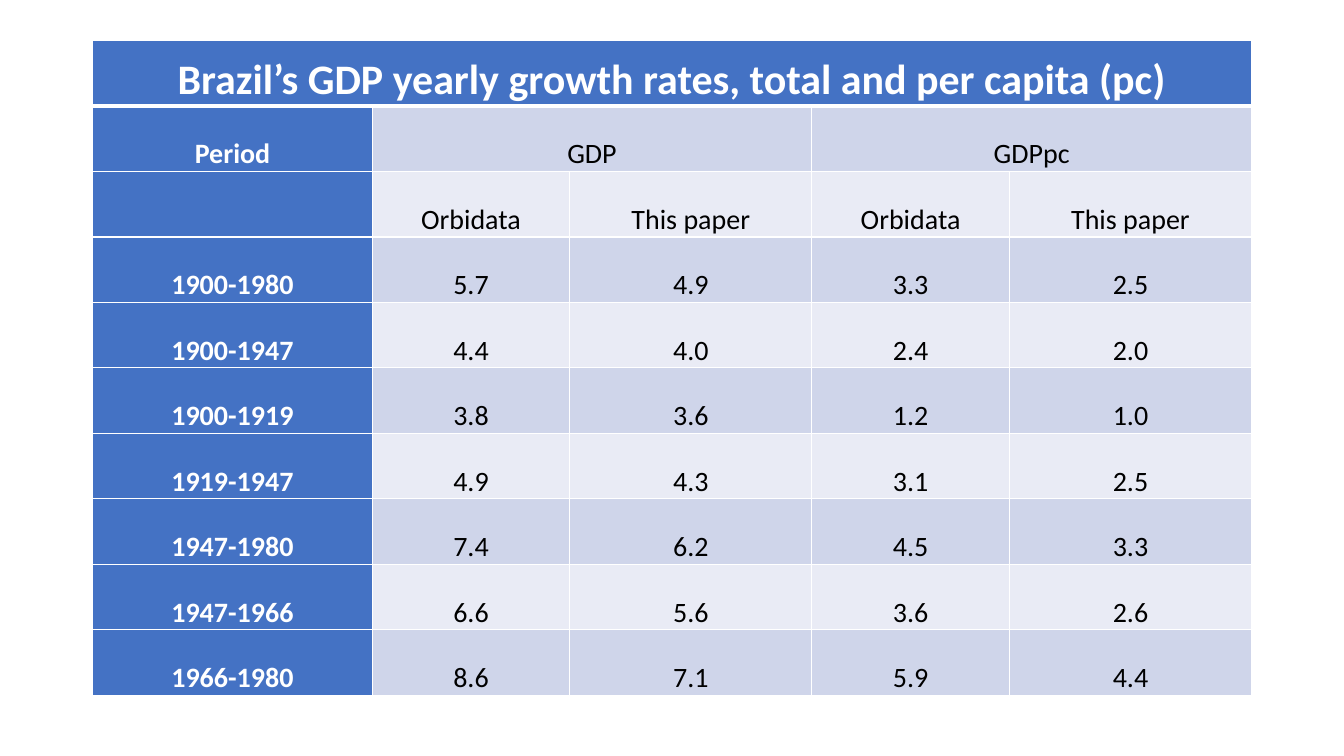
from lxml import etree
from pptx import Presentation
from pptx.dml.color import RGBColor
from pptx.enum.text import MSO_ANCHOR, PP_ALIGN
from pptx.oxml.ns import qn
from pptx.util import Cm, Pt

CENTER = PP_ALIGN.CENTER
BOTTOM = MSO_ANCHOR.BOTTOM

BLUE = RGBColor(0x44, 0x72, 0xC4)
DARK_BAND = RGBColor(0xCF, 0xD5, 0xEA)
LIGHT_BAND = RGBColor(0xE9, 0xEB, 0xF5)
WHITE = RGBColor(0xFF, 0xFF, 0xFF)
BLACK = RGBColor(0x00, 0x00, 0x00)

BLANK_LAYOUT = 6
COLUMN_WIDTHS = [7.04, 4.98, 6.1, 4.98, 6.1]
ROW_HEIGHT = 1.65

GROWTH_RATES = [
    ["Brazil’s GDP yearly growth rates, total and per capita (pc)", "", "", "", ""],
    ["Period", "GDP", "", "GDPpc", ""],
    ["", "Orbidata", "This paper", "Orbidata", "This paper"],
    ["1900-1980", "5.7", "4.9", "3.3", "2.5"],
    ["1900-1947", "4.4", "4.0", "2.4", "2.0"],
    ["1900-1919", "3.8", "3.6", "1.2", "1.0"],
    ["1919-1947", "4.9", "4.3", "3.1", "2.5"],
    ["1947-1980", "7.4", "6.2", "4.5", "3.3"],
    ["1947-1966", "6.6", "5.6", "3.6", "2.6"],
    ["1966-1980", "8.6", "7.1", "5.9", "4.4"],
]
# Merged headings: row, first column, last column
HEADING_SPANS = [(0, 0, 4), (1, 1, 2), (1, 3, 4)]


class GrowthPage:
    """Holds the table style and the current slide."""

    font_name = "Calibri"
    title_size = Pt(30)
    body_size = Pt(20)

    def __init__(self, deck):
        self.page = deck.slides.add_slide(deck.slide_layouts[BLANK_LAYOUT])

    def add_table(self, left, top, rows, widths, row_height, spans):
        frame = self.page.shapes.add_table(
            len(rows), len(widths), Cm(left), Cm(top),
            Cm(sum(widths)), Cm(row_height * len(rows)))
        table = frame.table
        for column, width in zip(table.columns, widths):
            column.width = Cm(width)
        for row in table.rows:
            row.height = Cm(row_height)
        for row, first, last in spans:
            table.cell(row, first).merge(table.cell(row, last))
        for row, texts in enumerate(rows):
            for column, text in enumerate(texts):
                self.style_cell(table.cell(row, column), text, row, column)

    def style_cell(self, cell, text, row, column):
        is_title = row == 0
        is_header = is_title or column == 0

        # Borders come before the fill; a thick rule lies under the title
        self.add_borders(cell, top=3 if row == 1 else 1, bottom=3 if is_title else 1)
        cell.fill.solid()
        band = DARK_BAND if row % 2 else LIGHT_BAND
        cell.fill.fore_color.rgb = BLUE if is_header else band

        # Text
        cell.vertical_anchor = BOTTOM
        cell.margin_left = cell.margin_right = Cm(0.13)
        cell.margin_top = cell.margin_bottom = 0
        cell.text = text
        para = cell.text_frame.paragraphs[0]
        para.alignment = CENTER
        para.line_spacing = 1.07
        para.space_after = Pt(8)
        para.font.name = self.font_name
        para.font.size = self.title_size if is_title else self.body_size
        para.font.bold = is_header
        para.font.color.rgb = WHITE if is_header else BLACK

    def add_borders(self, cell, top, bottom):
        properties = cell._tc.get_or_add_tcPr()
        for side, width in (("L", 1), ("R", 1), ("T", top), ("B", bottom)):
            line = etree.SubElement(properties, qn(f"a:ln{side}"), w=str(Pt(width)))
            fill = etree.SubElement(line, qn("a:solidFill"))
            etree.SubElement(fill, qn("a:srgbClr"), val=str(WHITE))


def main():
    deck = Presentation()
    deck.slide_width = Cm(33.87)
    deck.slide_height = Cm(19.05)

    # Growth rate table
    growth_page = GrowthPage(deck)
    growth_page.add_table(2.34, 1.02, GROWTH_RATES, COLUMN_WIDTHS, ROW_HEIGHT, HEADING_SPANS)

    deck.save("out.pptx")


if __name__ == "__main__":
    main()
